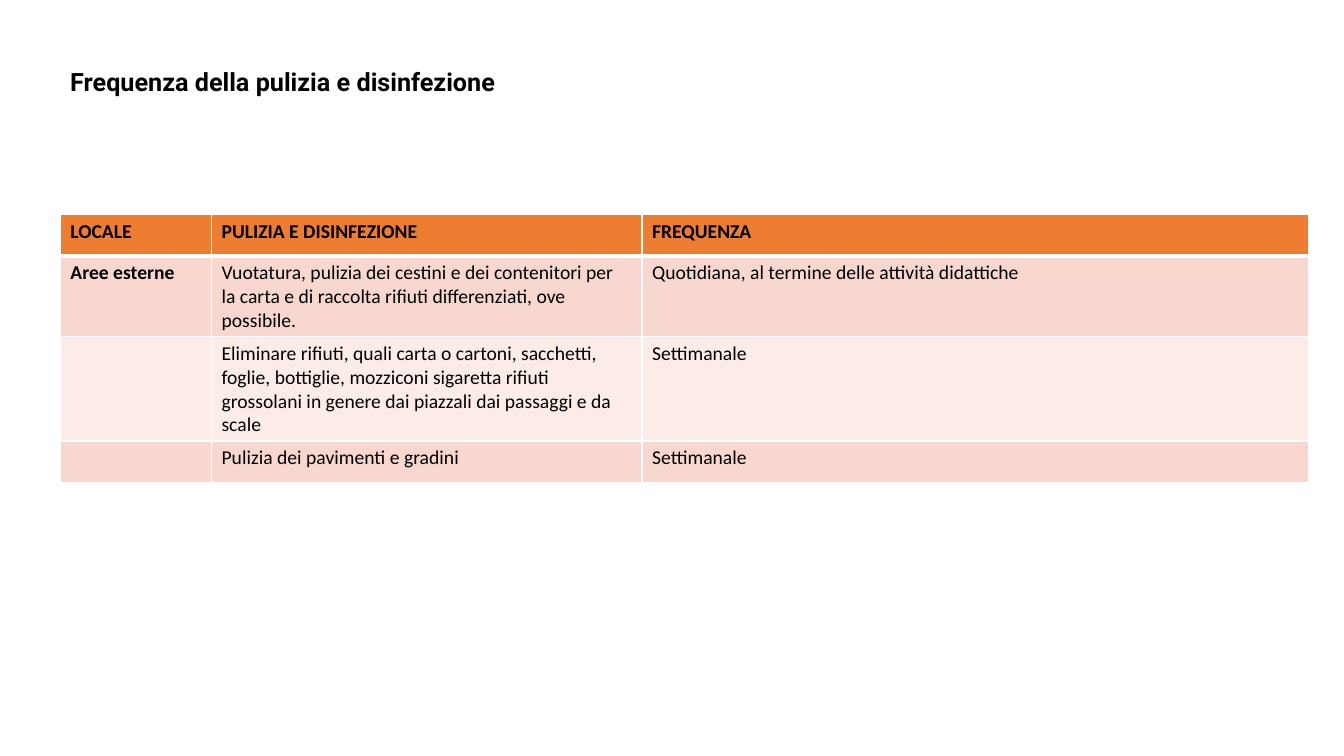
"""Build the slide on how often outdoor areas are cleaned and disinfected."""
from dataclasses import dataclass
from typing import Any

from lxml.etree import SubElement
from pptx import Presentation
from pptx.dml.color import RGBColor
from pptx.enum.text import MSO_AUTO_SIZE as AutoSize, PP_ALIGN as Align
from pptx.oxml.ns import qn
from pptx.util import Cm, Pt

BLACK = RGBColor(0x00, 0x00, 0x00)
WHITE = RGBColor(0xFF, 0xFF, 0xFF)
ORANGE = RGBColor(0xED, 0x7D, 0x31)
BAND_DARK = RGBColor(0xF8, 0xD7, 0xCE)
BAND_LIGHT = RGBColor(0xFC, 0xEC, 0xE8)

TITLE_FONT = {"name": "Roboto", "size": Pt(18), "bold": True}
CELL_FONT = {"name": "Calibri", "size": Pt(14), "bold": False}
BOLD_FONT = {**CELL_FONT, "bold": True}

LEFT = 1.52
COL_WIDTHS = (3.81, 10.85, 16.79)


@dataclass(frozen=True)
class Row:
    """One table row: its texts, height in cm, fill and lower border in points."""
    texts: tuple[str, str, str]
    height: float
    fill: RGBColor
    bottom: float = 1


ROWS = (
    Row(("LOCALE", "PULIZIA E DISINFEZIONE", "FREQUENZA"), 1.04, ORANGE, 3),
    Row(("Aree esterne",
         "Vuotatura, pulizia dei cestini e dei contenitori per la carta "
         "e di raccolta rifiuti differenziati, ove possibile.",
         "Quotidiana, al termine delle attività didattiche"), 2.02, BAND_DARK),
    Row(("",
         "Eliminare rifiuti, quali carta o cartoni, sacchetti, foglie, "
         "bottiglie, mozziconi sigaretta rifiuti grossolani in genere "
         "dai piazzali dai passaggi e da scale",
         "Settimanale"), 2.62, BAND_LIGHT),
    Row(("", "Pulizia dei pavimenti e gradini", "Settimanale"), 1.04, BAND_DARK),
)


def write(tf: Any, text: str, font: dict[str, Any], align: Align = Align.LEFT) -> None:
    """Put one formatted run into the first paragraph."""
    p = tf.paragraphs[0]
    p.alignment = align
    r = p.add_run()
    r.text = text
    r.font.color.rgb = BLACK
    for name, value in font.items():
        setattr(r.font, name, value)


def set_borders(cell: Any, widths: dict[str, float]) -> None:
    """Draw white cell borders, given as side and width in points."""
    tc_pr = cell._tc.get_or_add_tcPr()
    for i, (side, width) in enumerate(widths.items()):
        ln = tc_pr.makeelement(qn(f"a:ln{side}"), {"w": str(Pt(width))})
        fill = SubElement(ln, qn("a:solidFill"))
        SubElement(fill, qn("a:srgbClr"), val=str(WHITE))
        tc_pr.insert(i, ln)


def add_title(s: Any, text: str) -> None:
    """Add the slide heading."""
    sp = s.shapes.add_textbox(Cm(LEFT), Cm(1.55), Cm(12.07), Cm(1.02))
    tf = sp.text_frame
    tf.word_wrap = False
    tf.auto_size = AutoSize.SHAPE_TO_FIT_TEXT
    write(tf, text, TITLE_FONT)


def add_schedule(s: Any, rows: tuple[Row, ...]) -> None:
    """Add the cleaning schedule table."""
    height = sum(row.height for row in rows)
    table = s.shapes.add_table(len(rows), len(COL_WIDTHS), Cm(LEFT), Cm(5.41),
                               Cm(sum(COL_WIDTHS)), Cm(height)).table
    for column, width in zip(table.columns, COL_WIDTHS):
        column.width = Cm(width)
    top = 1
    for i, row in enumerate(rows):
        table.rows[i].height = Cm(row.height)
        for j, text in enumerate(row.texts):
            cell = table.cell(i, j)
            cell.fill.solid()
            cell.fill.fore_color.rgb = row.fill
            set_borders(cell, {"L": 1, "R": 1, "T": top, "B": row.bottom})
            if text:
                font = BOLD_FONT if i == 0 or j == 0 else CELL_FONT
                align = Align.JUSTIFY if i == 0 and j != 1 else Align.LEFT
                write(cell.text_frame, text, font, align)
        top = row.bottom


def main() -> None:
    """Create and save the presentation."""
    prs = Presentation()
    prs.slide_width, prs.slide_height = Cm(33.87), Cm(19.05)
    s = prs.slides.add_slide(prs.slide_layouts[6])
    add_title(s, "Frequenza della pulizia e disinfezione")
    add_schedule(s, ROWS)
    prs.save("out.pptx")


if __name__ == "__main__":
    main()
